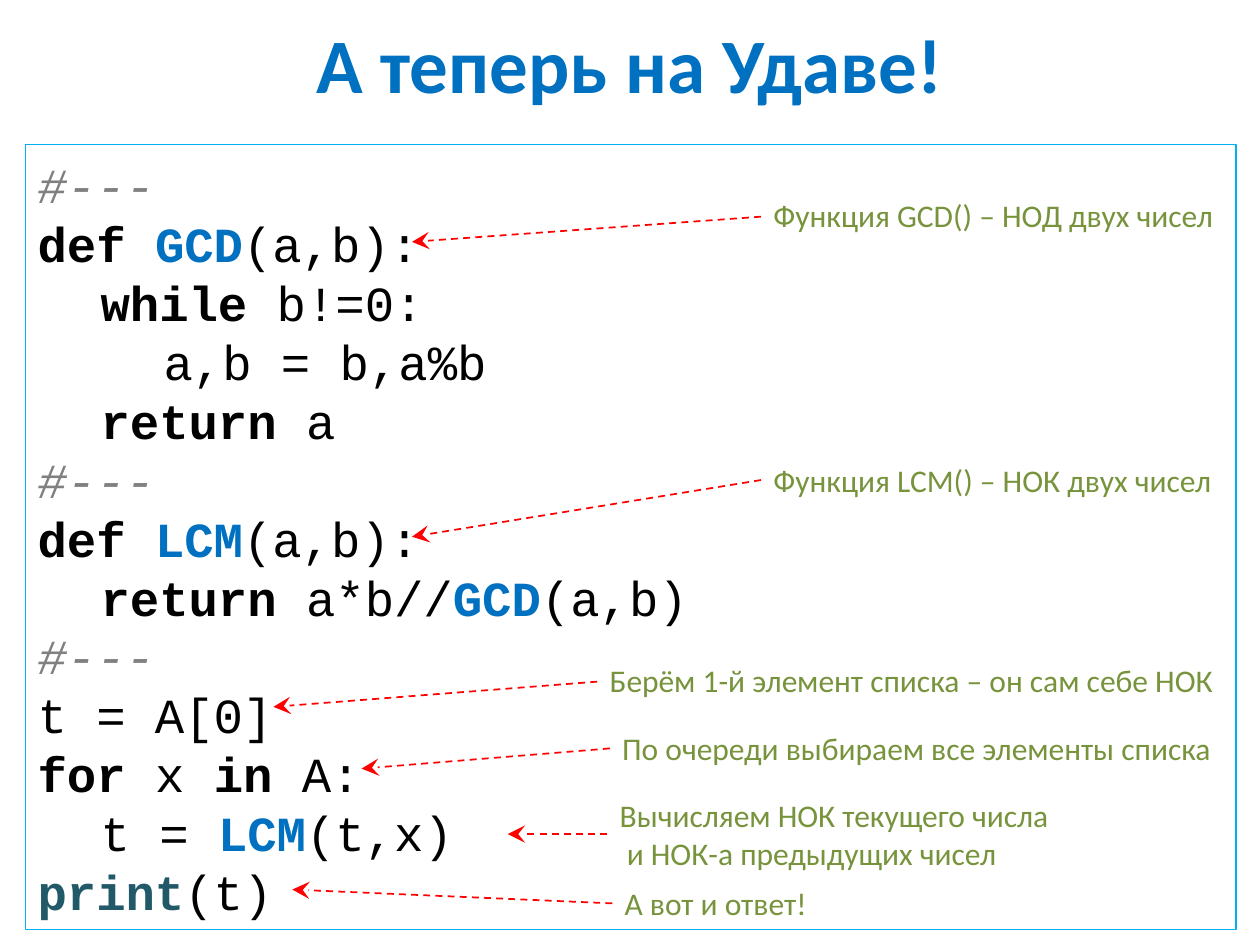
from lxml import etree
from pptx import Presentation
from pptx.dml.color import RGBColor
from pptx.enum.dml import MSO_LINE
from pptx.enum.shapes import MSO_CONNECTOR, MSO_SHAPE
from pptx.enum.text import MSO_ANCHOR, PP_ALIGN
from pptx.oxml.ns import qn
from pptx.util import Inches, Pt

CENTER, LEFT = PP_ALIGN.CENTER, PP_ALIGN.LEFT
MIDDLE = MSO_ANCHOR.MIDDLE
RECTANGLE = MSO_SHAPE.RECTANGLE
STRAIGHT = MSO_CONNECTOR.STRAIGHT
DASH = MSO_LINE.DASH
TITLE_ONLY = 5


def color(value):
    return RGBColor.from_string(value)


def format_span(span, font, size, value, bold=False, italic=False):
    span.font.name = font
    span.font.size = Pt(size)
    span.font.color.rgb = color(value)
    span.font.bold = bold
    span.font.italic = italic


deck = Presentation()
deck.slide_width, deck.slide_height = Inches(10), Inches(7.5)
page = deck.slides.add_slide(deck.slide_layouts[TITLE_ONLY])

# Title
title = page.shapes.title
title.left, title.top = Inches(0), Inches(0)
title.width, title.height = Inches(10), Inches(1)
title.text_frame.text = "А теперь на Удаве!"
title.text_frame.vertical_anchor = MIDDLE
title_para = title.text_frame.paragraphs[0]
title_para.alignment = CENTER
format_span(title_para.runs[0], "Calibri", 44, "0070C0", bold=True)

# Code listing: each line is a list of (text, style) pairs
styles = {
    "plain": ("000000", False, False),
    "keyword": ("000000", True, False),
    "function": ("0070C0", True, False),
    "builtin": ("215968", True, False),
    "comment": ("808080", False, True),
}
separator = [("#---", "comment")]
code_lines = [
    separator,
    [("def ", "keyword"), ("GCD", "function"), ("(a,b):", "plain")],
    [("\twhile", "keyword"), (" b!=0:", "plain")],
    [("\t\ta,b = b,a%b", "plain")],
    [("\treturn ", "keyword"), ("a", "plain")],
    separator,
    [("def ", "keyword"), ("LCM", "function"), ("(a,b):", "plain")],
    [("\treturn", "keyword"), (" a*b//", "plain"), ("GCD", "function"), ("(a,b)", "plain")],
    separator,
    [("t = A[0]", "plain")],
    [("for", "keyword"), (" x ", "plain"), ("in", "keyword"), (" A:", "plain")],
    [("\tt = ", "plain"), ("LCM", "function"), ("(t,x)", "plain")],
    [("print", "builtin"), ("(t)", "plain")],
]
code_box = page.shapes.add_shape(RECTANGLE, Inches(0.2), Inches(1.15), Inches(9.61), Inches(6.23))
code_box.shadow.inherit = False
code_box.fill.background()
code_box.line.color.rgb = color("00B0F0")
code_box.line.width = Pt(0.75)
code_frame = code_box.text_frame
code_frame.word_wrap = True
code_frame.vertical_anchor = MIDDLE
for index, code_line in enumerate(code_lines):
    para = code_frame.add_paragraph() if index else code_frame.paragraphs[0]
    para.alignment = LEFT
    para.line_spacing = Pt(33.7)
    for text, style in code_line:
        span = para.add_run()
        span.text = text
        format_span(span, "Courier New", 28, *styles[style])

# Notes on the code: text, left, top, width, height, arrow start y, arrow tip x and y
notes = [
    ("Функция GCD() – НОД двух чисел", 6.04, 1.51, 3.74, 0.4, 1.72, 3.27, 1.92),
    ("Берём 1-й элемент списка – он сам себе НОК", 4.74, 5.2, 5.04, 0.4, 5.41, 2.17, 5.61),
    ("По очереди выбираем все элементы списка", 4.84, 5.74, 4.96, 0.4, 5.94, 2.87, 6.1),
    ("Вычисляем НОК текущего числа\v и НОК-а предыдущих чисел",
     4.82, 6.27, 4.96, 0.71, 6.62, 4.03, 6.62),
    ("А вот и ответ!", 4.86, 6.97, 4.94, 0.4, 7.17, 2.32, 7.06),
    ("Функция LCM() – НОК двух чисел", 6.04, 3.61, 3.74, 0.4, 3.81, 3.27, 4.26),
]
for text, left, top, width, height, start_y, tip_x, tip_y in notes:
    group = page.shapes.add_group_shape()
    box = group.shapes.add_textbox(Inches(left), Inches(top), Inches(width), Inches(height))
    box.text_frame.word_wrap = True
    para = box.text_frame.paragraphs[0]
    para.text = text
    for span in para.runs:
        format_span(span, "Calibri", 18, "77933C")

    # Dashed arrow from the note to its code line
    arrow = group.shapes.add_connector(
        STRAIGHT, Inches(left), Inches(start_y), Inches(tip_x), Inches(tip_y))
    arrow.line.color.rgb = color("FF0000")
    arrow.line.width = Pt(1)
    arrow.line.dash_style = DASH
    properties = arrow.element.spPr
    etree.SubElement(properties.find(qn("a:ln")), qn("a:tailEnd"), type="stealth", w="lg", len="lg")
    etree.SubElement(properties, qn("a:effectLst"))

deck.save("out.pptx")
